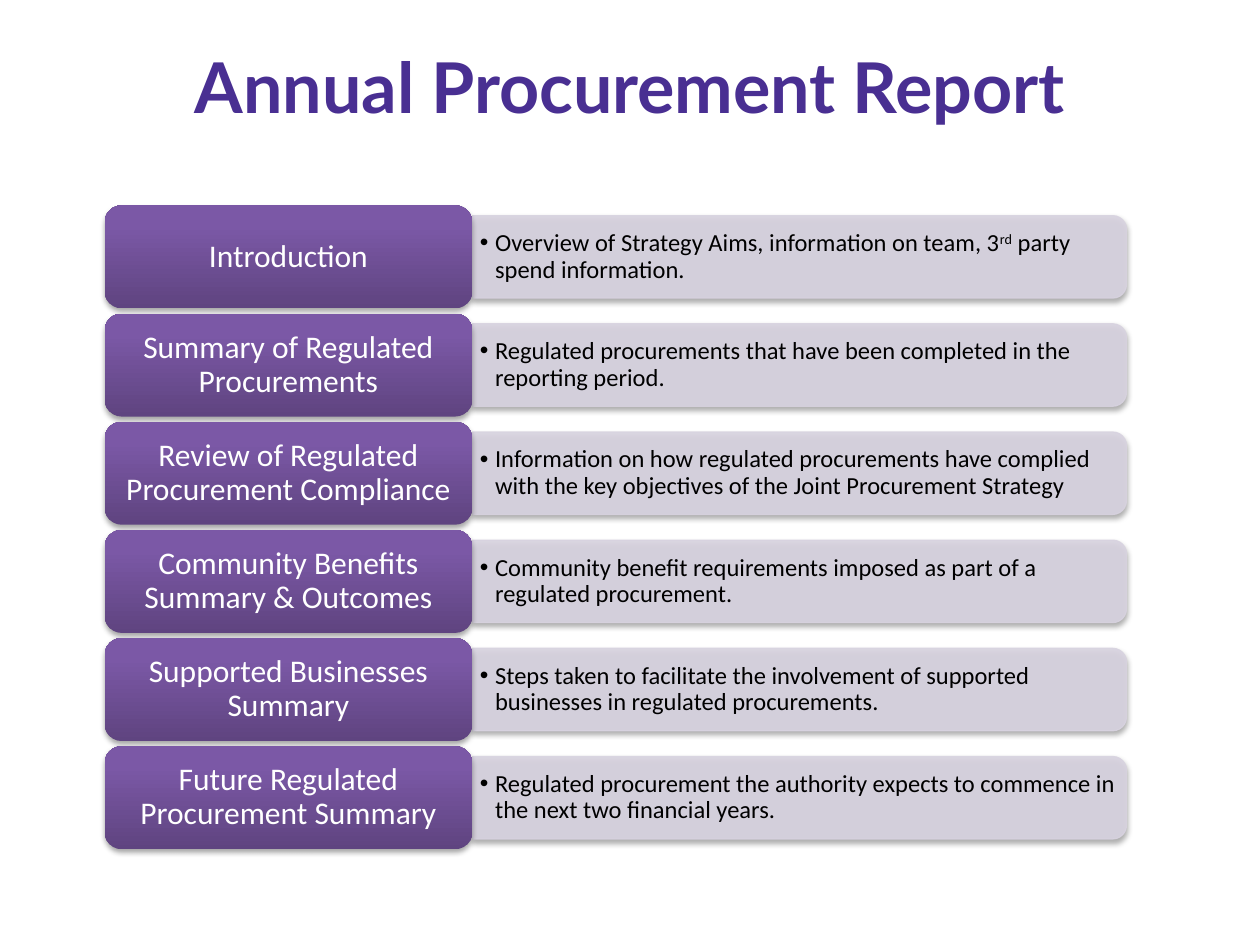
from dataclasses import dataclass

from pptx import Presentation
from pptx.dml.color import RGBColor as RGB
from pptx.enum.shapes import MSO_SHAPE as SHAPE
from pptx.enum.text import MSO_ANCHOR as ANCHOR, PP_ALIGN as ALIGN
from pptx.oxml import parse_xml
from pptx.oxml.ns import nsdecls, qn
from pptx.util import Inches, Pt


@dataclass(frozen=True)
class Theme:
    """Colours, fonts and type sizes of the slide."""
    title: str = "492F92"
    panel: str = "D8D3E0"
    label: str = "FFFFFF"
    detail: str = "000000"
    shadow: str = "000000"
    gradient: tuple = ((0, "5F4480"), (80, "7B58A6"), (100, "7C57A8"))
    title_font: str = "Lato"
    body_font: str = "Calibri"
    title_size: int = 40
    label_size: int = 18
    detail_size: int = 14


T = Theme()
WIDTH, HEIGHT = 10, 7.5
GAP = 0.05
LABEL_SHARE, PANEL_SHARE = 0.36, 0.8
TITLE = "Annual Procurement Report"
ROWS = [
    ("Introduction",
     ["Overview of Strategy Aims, information on team, 3", "^rd",
      " party spend information."]),
    ("Summary of Regulated Procurements",
     ["Regulated procurements that have been completed in the reporting period."]),
    ("Review of Regulated Procurement Compliance",
     ["Information on how regulated procurements have complied with the key "
      "objectives of the Joint Procurement Strategy"]),
    ("Community Benefits Summary & Outcomes",
     ["Community benefit requirements imposed as part of a regulated procurement."]),
    ("Supported Businesses Summary",
     ["Steps taken to facilitate the involvement of supported businesses in "
      "regulated procurements."]),
    ("Future Regulated Procurement Summary",
     ["Regulated procurement the authority expects to commence in the next two "
      "financial years."]),
]


def emu(box):
    """Turn a box in inches into slide units."""
    return [Inches(v) for v in box]


def add_run(p, text, font, size, color, bold=False):
    """Add one run; a leading caret marks a superscript."""
    r = p.add_run()
    r.text = text.removeprefix("^")
    r.font.name, r.font.size, r.font.bold = font, Pt(size), bold
    r.font.color.rgb = RGB.from_string(color)
    if text.startswith("^"):
        r.font._element.set("baseline", "30000")


def setup_frame(s, inset_x, inset_y, spacing=None, align=ALIGN.LEFT):
    """Prepare a wrapped, vertically centred frame and return its paragraph."""
    tf = s.text_frame
    tf.word_wrap, tf.vertical_anchor = True, ANCHOR.MIDDLE
    tf.margin_left = tf.margin_right = Inches(inset_x)
    tf.margin_top = tf.margin_bottom = Inches(inset_y)
    p = tf.paragraphs[0]
    p.alignment, p.line_spacing = align, spacing
    return p


def add_shadow(s):
    """Give a shape a soft shadow straight below it."""
    s.shadow.inherit = False
    s._element.spPr.find(qn("a:effectLst")).append(parse_xml(
        f'<a:outerShdw {nsdecls("a")} blurRad="{Pt(3.1)}" dist="{Pt(1.8)}" '
        f'dir="5400000" rotWithShape="0"><a:srgbClr val="{T.shadow}">'
        '<a:alpha val="35000"/></a:srgbClr></a:outerShdw>'))


def fill_gradient(s):
    """Fill a shape with the theme gradient, from bottom to top."""
    s.fill.background()
    stops = "".join(f'<a:gs pos="{pos * 1000}"><a:srgbClr val="{color}"/></a:gs>'
                    for pos, color in T.gradient)
    spPr = s._element.spPr
    spPr.replace(spPr.find(qn("a:noFill")), parse_xml(
        f'<a:gradFill {nsdecls("a")} rotWithShape="1"><a:gsLst>{stops}</a:gsLst>'
        '<a:lin ang="16200000" scaled="0"/></a:gradFill>'))


def add_title(sp, box):
    """Place the slide title."""
    p = setup_frame(sp.add_textbox(*emu(box)), 0.1, 0.05, align=ALIGN.CENTER)
    add_run(p, TITLE, T.title_font, T.title_size, T.title, bold=True)


def add_panel(sp, box):
    """Place a pale panel, rounded on its right-hand corners."""
    x, y, w, h = box
    s = sp.add_shape(SHAPE.ROUND_2_SAME_RECTANGLE,
                     *emu((x + (w - h) / 2, y + (h - w) / 2, h, w)))
    s.rotation = 90
    s.fill.solid()
    s.fill.fore_color.rgb = s.line.color.rgb = RGB.from_string(T.panel)
    s.line.width = Pt(0.75)
    for color in s._element.spPr.iter(qn("a:srgbClr")):
        color.append(parse_xml(f'<a:alpha {nsdecls("a")} val="90000"/>'))
    add_shadow(s)


def add_detail(sp, box, parts):
    """Place the bulleted text of a row."""
    p = setup_frame(sp.add_textbox(*emu(box)), 0.06, 0.03, 0.9)
    pPr = p._p.get_or_add_pPr()
    pPr.set("marL", str(Inches(0.12)))
    pPr.set("indent", str(Inches(-0.12)))
    pPr.append(parse_xml(f'<a:buFont {nsdecls("a")} typeface="Arial"/>'))
    pPr.append(parse_xml(f'<a:buChar {nsdecls("a")} char="•"/>'))
    for text in parts:
        add_run(p, text, T.body_font, T.detail_size, T.detail)


def add_label(sp, box, text):
    """Place the purple heading of a row."""
    s = sp.add_shape(SHAPE.ROUNDED_RECTANGLE, *emu(box))
    fill_gradient(s)
    s.line.fill.background()
    add_shadow(s)
    p = setup_frame(s, 0.07, 0.04, 0.9, ALIGN.CENTER)
    add_run(p, text, T.body_font, T.label_size, T.label)


def add_rows(sp, box):
    """Stack the heading and detail rows evenly in the box."""
    x, y, w, h = box
    row_h = h / (len(ROWS) + GAP * (len(ROWS) - 1))
    label_w, panel_h = w * LABEL_SHARE, row_h * PANEL_SHARE
    for i, (label, parts) in enumerate(ROWS):
        top = y + i * row_h * (1 + GAP)
        panel = (x + label_w, top + (row_h - panel_h) / 2, w - label_w, panel_h)
        add_panel(sp, panel)
        add_detail(sp, panel, parts)
        add_label(sp, (x, top, label_w, row_h), label)


def main():
    """Build and save the slide."""
    prs = Presentation()
    prs.slide_width, prs.slide_height = Inches(WIDTH), Inches(HEIGHT)
    sp = prs.slides.add_slide(prs.slide_layouts[6]).shapes
    add_title(sp, (WIDTH * 0.05, HEIGHT * 0.04, WIDTH * 0.9, HEIGHT * 0.1))
    add_rows(sp, (0.83, 1.63, 8.11, 5.11))
    prs.save("out.pptx")


if __name__ == "__main__":
    main()
